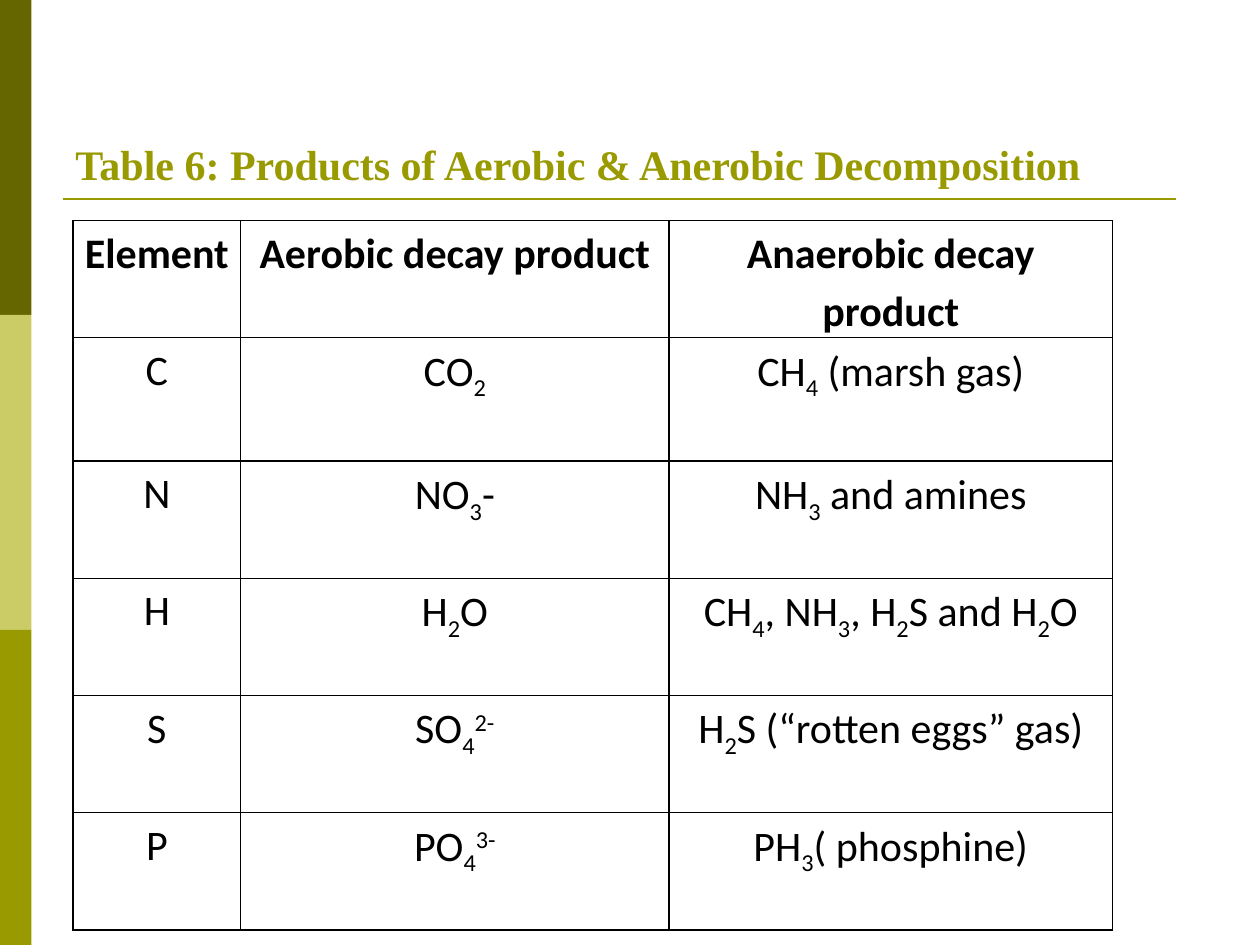
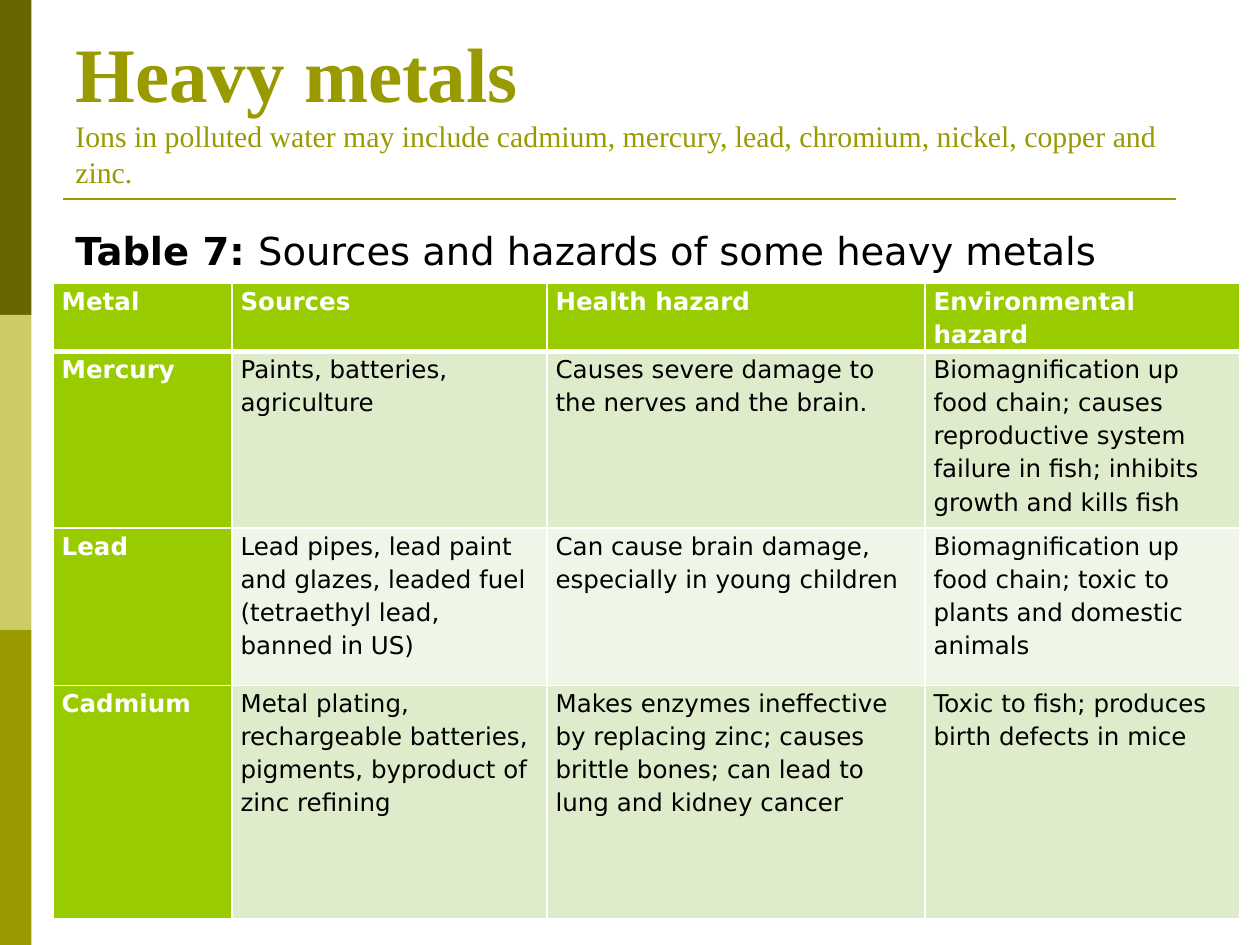
from itertools import groupby

from lxml import etree
from pptx import Presentation
from pptx.dml.color import RGBColor
from pptx.enum.shapes import MSO_CONNECTOR, MSO_SHAPE
from pptx.enum.text import MSO_ANCHOR, PP_ALIGN
from pptx.oxml.ns import qn
from pptx.util import Inches, Pt

RECTANGLE = MSO_SHAPE.RECTANGLE
STRAIGHT = MSO_CONNECTOR.STRAIGHT
TOP, BOTTOM = MSO_ANCHOR.TOP, MSO_ANCHOR.BOTTOM
LEFT, CENTER = PP_ALIGN.LEFT, PP_ALIGN.CENTER

OLIVE = "999900"
BAND_COLOURS = ["666600", "CCCC66", OLIVE]
BLACK, WHITE = "000000", "FFFFFF"
GREEN = "99CC00"
ROW_TINTS = ["DEECCC", "EFF6E7"]

TITLE_FONT = "Times New Roman"
BODY_FONT = "DejaVu Sans"
FORMULA_FONT = "Calibri"
TITLE_BOX = (0.5, 0.3, 9, 1.25)

SUBSCRIPTS = {"₂": "2", "₃": "3", "₄": "4"}
SUPERSCRIPTS = {"²": "2", "³": "3", "⁻": "-"}

DECAY_PRODUCTS = [
    ["Element", "Aerobic decay product", "Anaerobic decay product"],
    ["C", "CO₂", "CH₄ (marsh gas)"],
    ["N", "NO₃-", "NH₃ and amines"],
    ["H", "H₂O", "CH₄, NH₃, H₂S and H₂O"],
    ["S", "SO₄²⁻", "H₂S (“rotten eggs” gas)"],
    ["P", "PO₄³⁻", "PH₃( phosphine)"],
]

HEAVY_METALS = [
    ["Metal", "Sources", "Health hazard", "Environmental hazard"],
    ["Mercury", "Paints, batteries, agriculture",
     "Causes severe damage to the nerves and the brain.",
     "Biomagnification up food chain; causes reproductive system failure "
     "in fish; inhibits growth and kills fish"],
    ["Lead",
     "Lead pipes, lead paint and glazes, leaded fuel "
     "(tetraethyl lead, banned in US)",
     "Can cause brain damage, especially in young children",
     "Biomagnification up food chain; toxic to plants and domestic animals"],
    ["Cadmium",
     "Metal plating,\nrechargeable batteries,\n"
     "pigments, byproduct of zinc refining",
     "Makes enzymes ineffective by replacing zinc; causes brittle bones; "
     "can lead to lung and kidney cancer",
     "Toxic to fish; produces birth defects in mice"],
]


def rgb(hex_colour):
    return RGBColor.from_string(hex_colour)


def add_run(paragraph, text, font, size, colour, bold=False):
    run = paragraph.add_run()
    run.text = text
    run.font.name = font
    run.font.size = Pt(size)
    run.font.bold = bold
    run.font.color.rgb = rgb(colour)
    return run


def baseline_shift(character):
    """Return the baseline offset that a formula character calls for."""
    if character in SUBSCRIPTS:
        return -25000
    return 30000 if character in SUPERSCRIPTS else 0


def add_formula(paragraph, formula, *style):
    """Write a formula with its small digits as shifted plain digits."""
    plain = SUBSCRIPTS | SUPERSCRIPTS
    for shift, characters in groupby(formula, baseline_shift):
        text = "".join(plain.get(char, char) for char in characters)
        run = add_run(paragraph, text, *style)
        if shift:
            run.font._element.set("baseline", str(shift))


def add_text_box(slide, box, anchor):
    """Add an empty wrapping text box and return its first paragraph."""
    frame = slide.shapes.add_textbox(*map(Inches, box)).text_frame
    frame.word_wrap = True
    frame.vertical_anchor = anchor
    return frame.paragraphs[0]


def add_title(slide, title, size, subtitle=""):
    paragraph = add_text_box(slide, TITLE_BOX, BOTTOM)
    add_run(paragraph, title, TITLE_FONT, size, OLIVE, True)
    if subtitle:
        paragraph.add_line_break()
        add_run(paragraph, subtitle, TITLE_FONT, 17, OLIVE)


def add_side_bands(slide):
    height = 2.5
    for index, colour in enumerate(BAND_COLOURS):
        band = slide.shapes.add_shape(
            RECTANGLE, 0, Inches(index * height), Inches(0.25), Inches(height))
        band.shadow.inherit = False
        band.fill.solid()
        band.fill.fore_color.rgb = rgb(colour)
        band.line.fill.background()


def add_title_rule(slide):
    y = Inches(1.58)
    rule = slide.shapes.add_connector(STRAIGHT, Inches(0.5), y, Inches(9.33), y)
    rule.line.color.rgb = rgb(OLIVE)
    rule.line.width = Pt(1.5)
    etree.SubElement(rule._element.spPr, qn("a:effectLst"))


def add_slide(deck):
    """Add a blank slide with the side bands and the rule under the title."""
    slide = deck.slides.add_slide(deck.slide_layouts[6])
    add_side_bands(slide)
    add_title_rule(slide)
    return slide


def set_borders(cell, colour, top=1, bottom=1):
    properties = cell._tc.get_or_add_tcPr()
    for side, width in (("L", 1), ("R", 1), ("T", top), ("B", bottom)):
        line = etree.SubElement(properties, qn(f"a:ln{side}"), w=str(Pt(width)))
        fill = etree.SubElement(line, qn("a:solidFill"))
        etree.SubElement(fill, qn("a:srgbClr"), val=colour)


def set_fill(cell, colour):
    if colour:
        cell.fill.solid()
        cell.fill.fore_color.rgb = rgb(colour)
    else:
        cell.fill.background()


def fill_cell(cell, text, align, *style):
    cell.margin_left = cell.margin_right = Inches(0.07)
    cell.margin_top = cell.margin_bottom = 0
    frame = cell.text_frame
    for index, line in enumerate(text.split("\n")):
        paragraph = frame.add_paragraph() if index else frame.paragraphs[0]
        paragraph.alignment = align
        paragraph.line_spacing = 1.15
        add_formula(paragraph, line, *style)


def add_grid(slide, left, top, widths, heights):
    """Add an empty table with the given column widths and row heights."""
    table = slide.shapes.add_table(
        len(heights), len(widths), Inches(left), Inches(top),
        Inches(sum(widths)), Inches(sum(heights))).table
    for column, width in zip(table.columns, widths):
        column.width = Inches(width)
    for row, height in zip(table.rows, heights):
        row.height = Inches(height)
    return table


def add_decay_table(slide):
    heights = [0.93, 0.98] + [0.93] * 4
    table = add_grid(slide, 0.58, 1.75, [1.33, 3.4, 3.52], heights)
    for r, row in enumerate(DECAY_PRODUCTS):
        for c, text in enumerate(row):
            cell = table.cell(r, c)
            fill_cell(cell, text, CENTER, FORMULA_FONT, 24, BLACK, r == 0)
            set_borders(cell, BLACK)
            set_fill(cell, None)


def add_metals_table(slide):
    table = add_grid(slide, 0.42, 2.25, [1.42, 2.5, 3, 2.5],
                     [0.54, 1.4, 1.25, 1.85])
    for r, row in enumerate(HEAVY_METALS):
        for c, text in enumerate(row):
            cell = table.cell(r, c)
            heading = r == 0 or c == 0
            colour = WHITE if heading else BLACK
            fill_cell(cell, text, LEFT, BODY_FONT, 14, colour, heading)
            set_borders(cell, WHITE, top=3 if r == 1 else 1,
                        bottom=3 if r == 0 else 1)
            set_fill(cell, GREEN if heading else ROW_TINTS[(r - 1) % 2])


def add_table_caption(slide, label, caption):
    paragraph = add_text_box(slide, (0.5, 1.75, 9, 0.5), TOP)
    paragraph.space_before = Pt(2)
    add_run(paragraph, label, BODY_FONT, 22, BLACK, True)
    add_run(paragraph, caption, BODY_FONT, 22, BLACK)


def main():
    deck = Presentation()
    deck.slide_width, deck.slide_height = Inches(10), Inches(7.5)

    decomposition = add_slide(deck)
    add_title(decomposition,
              "Table 6: Products of Aerobic & Anerobic Decomposition", 24)
    add_decay_table(decomposition)

    metals = add_slide(deck)
    add_title(metals, "Heavy metals", 44,
              "Ions in polluted water may include cadmium, mercury, lead, "
              "chromium, nickel, copper and zinc.")
    add_table_caption(metals, "Table 7: ",
                      "Sources and hazards of some heavy metals")
    add_metals_table(metals)

    deck.save("out.pptx")


if __name__ == "__main__":
    main()
